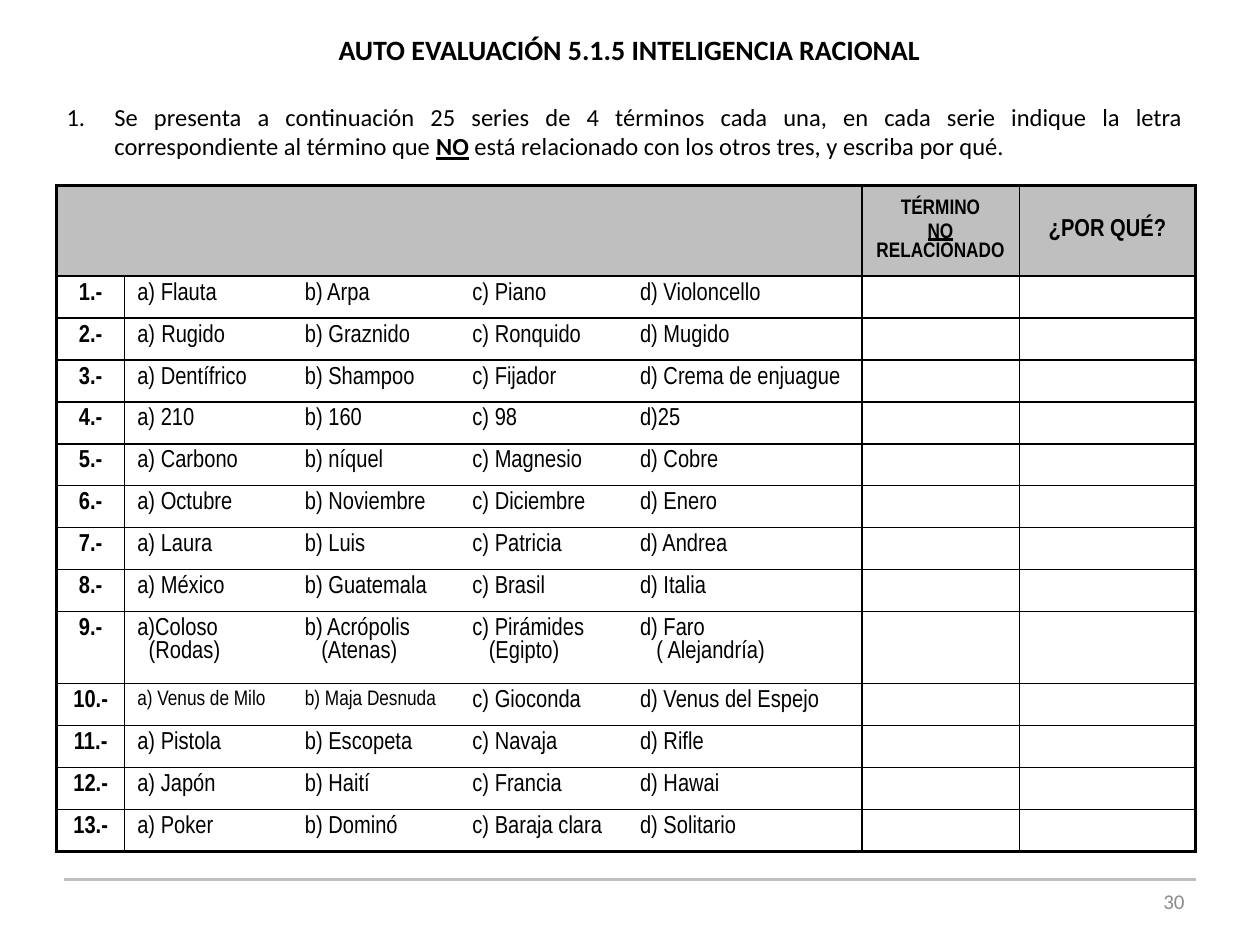
from lxml import etree
from pptx import Presentation
from pptx.dml.color import RGBColor
from pptx.enum.shapes import MSO_CONNECTOR
from pptx.enum.text import MSO_ANCHOR, PP_ALIGN
from pptx.oxml.ns import qn
from pptx.util import Inches, Pt

BLACK = RGBColor(0x00, 0x00, 0x00)
SILVER = RGBColor(0xBF, 0xBF, 0xBF)
GRAY = RGBColor(0x8C, 0x8C, 0x8C)
CENTER, RIGHT, JUSTIFY = PP_ALIGN.CENTER, PP_ALIGN.RIGHT, PP_ALIGN.JUSTIFY
MIDDLE = MSO_ANCHOR.MIDDLE
STRAIGHT = MSO_CONNECTOR.STRAIGHT
NARROW, CALIBRI = "Arial Narrow", "Calibri"

SERIES = [
    ["a) Flauta", "b) Arpa", "c) Piano", "d) Violoncello"],
    ["Rugido", "b) Graznido", "c) Ronquido", "d) Mugido"],
    ["a) Dentífrico", "b) Shampoo", "c) Fijador", "d) Crema de enjuague"],
    ["a) 210", "b) 160", "c) 98", "d)25"],
    ["a) Carbono", "b) níquel", "c) Magnesio", "d) Cobre"],
    ["a) Octubre", "b) Noviembre", "c) Diciembre", "d) Enero"],
    ["a) Laura", "b) Luis", "c) Patricia", "d) Andrea"],
    ["a) México", "b) Guatemala", "c) Brasil", "d) Italia"],
    ["a)Coloso\n(Rodas)", "b) Acrópolis\n(Atenas)",
     "c) Pirámides\n(Egipto)", "d) Faro\n( Alejandría)"],
    ["a) Venus de Milo", "b) Maja Desnuda", "c) Gioconda", "d) Venus del Espejo"],
    ["a) Pistola", "b) Escopeta", "c) Navaja", "d) Rifle"],
    ["a) Japón", "b) Haití", "c) Francia", "d) Hawai"],
    ["a) Poker", "b) Dominó", "c) Baraja clara", "d) Solitario"],
]
SMALL_TERMS = ("a) Venus de Milo", "b) Maja Desnuda")
COLUMN_WIDTHS = [0.54, 1.33, 1.33, 1.33, 1.86, 1.25, 1.4]
ROW_HEIGHTS = [0.72] + [4 / 12] * 8 + [0.57] + [4 / 12] * 4
# Rule widths in points, from the first edge to the last
VERTICAL_RULES = [2.25, 1, 0, 0, 0, 1, 1, 2.25]
HORIZONTAL_RULES = [2.25, 1.5] + [1] * 12 + [2.25]


def write(frame, text, size, font, align, bold=False, color=BLACK):
    frame.word_wrap = True
    frame.text = text
    for para in frame.paragraphs:
        para.alignment = align
        for span in para.runs:
            span.font.size = Pt(size)
            span.font.name = font
            span.font.bold = bold
            span.font.color.rgb = color


def add_number(para, scheme, indent):
    properties = para._p.get_or_add_pPr()
    properties.set("marL", str(Inches(indent)))
    properties.set("indent", str(-Inches(indent)))
    etree.SubElement(properties, qn("a:buFont"), typeface="+mj-lt")
    etree.SubElement(properties, qn("a:buAutoNum"), type=scheme)


deck = Presentation()
deck.slide_width, deck.slide_height = Inches(10), Inches(7.5)
page = deck.slides.add_slide(deck.slide_layouts[6])

# Footer rule
rule = page.shapes.add_connector(
    STRAIGHT, Inches(0.51), Inches(6.98), Inches(9.49), Inches(6.98))
rule.line.color.rgb = SILVER
rule.line.width = Pt(2)
etree.SubElement(rule._element.spPr, qn("a:effectLst"))

# Table grid
table = page.shapes.add_table(
    len(ROW_HEIGHTS), len(COLUMN_WIDTHS), Inches(0.45), Inches(1.47),
    Inches(sum(COLUMN_WIDTHS)), Inches(sum(ROW_HEIGHTS))).table
table.first_row = table.horz_banding = False
for column, width in zip(table.columns, COLUMN_WIDTHS):
    column.width = Inches(width)
for row, height in zip(table.rows, ROW_HEIGHTS):
    row.height = Inches(height)

# Table wording
contents = [[""] * 5 + ["TÉRMINO\nNO RELACIONADO", "¿POR QUÉ?"]]
contents += [[f"{number}.-", *terms, "", ""] for number, terms in enumerate(SERIES, 1)]

for r, texts in enumerate(contents):
    for c, text in enumerate(texts):
        cell = table.cell(r, c)
        is_header = r == 0
        is_term = not is_header and 1 <= c <= 4
        size = 12 if text in SMALL_TERMS or (is_header and c == 5) else 14
        write(cell.text_frame, text, size, NARROW,
              JUSTIFY if is_term else CENTER, bold=not is_term)
        if not text:
            # Small empty lines keep the row heights
            etree.SubElement(cell.text_frame.paragraphs[0]._p,
                             qn("a:endParaRPr"), sz="1200")
        if is_term and "\n" in text:
            place = cell.text_frame.paragraphs[1]
            place._p.get_or_add_pPr().set("marL", str(Inches(0.09 if c == 1 else 0.13)))

        # Cell borders and fill
        properties = cell._tc.get_or_add_tcPr()
        borders = {"a:lnL": VERTICAL_RULES[c], "a:lnR": VERTICAL_RULES[c + 1],
                   "a:lnT": HORIZONTAL_RULES[r], "a:lnB": HORIZONTAL_RULES[r + 1]}
        for tag, width in borders.items():
            border = etree.SubElement(properties, qn(tag), w=str(Pt(width)))
            if width:
                paint = etree.SubElement(border, qn("a:solidFill"))
                etree.SubElement(paint, qn("a:srgbClr"), val=str(BLACK))
            else:
                etree.SubElement(border, qn("a:noFill"))
        if is_header:
            cell.vertical_anchor = MIDDLE
            cell.fill.solid()
            cell.fill.fore_color.rgb = SILVER
        else:
            cell.fill.background()

table.cell(0, 0).merge(table.cell(0, 4))
add_number(table.cell(2, 1).text_frame.paragraphs[0], "alphaLcParenR", 0.19)

# Underlined NO in the header
para = table.cell(0, 5).text_frame.paragraphs[1]
para.space_before = Pt(2.4)
para.runs[0].text = "NO"
para.runs[0].font.underline = True
span = para.add_run()
span.text = " RELACIONADO"
span.font.size, span.font.name, span.font.bold = Pt(12), NARROW, True
span.font.color.rgb = BLACK

# Instructions
box = page.shapes.add_textbox(Inches(0.43), Inches(0.76), Inches(9.06), Inches(0.57))
write(box.text_frame, "", 14, CALIBRI, JUSTIFY)
para = box.text_frame.paragraphs[0]
add_number(para, "arabicPeriod", 0.38)
for text, stressed in [
    ("Se presenta a continuación 25 series de 4 términos cada una, en cada serie "
     "indique la letra correspondiente al término que ", False),
    ("NO", True),
    (" está relacionado con los otros tres, y escriba por qué.", False),
]:
    span = para.add_run()
    span.text = text
    span.font.size, span.font.name = Pt(14), CALIBRI
    span.font.bold = span.font.underline = stressed
    span.font.color.rgb = BLACK

# Title
box = page.shapes.add_textbox(Inches(0.27), Inches(0.21), Inches(9.45), Inches(0.37))
write(box.text_frame, "AUTO EVALUACIÓN 5.1.5 INTELIGENCIA RACIONAL",
      16, CALIBRI, CENTER, bold=True)

# Page number
box = page.shapes.add_textbox(Inches(7.17), Inches(6.95), Inches(2.33), Inches(0.4))
write(box.text_frame, "30", 12, CALIBRI, RIGHT, color=GRAY)
box.text_frame.vertical_anchor = MIDDLE

deck.save("out.pptx")
